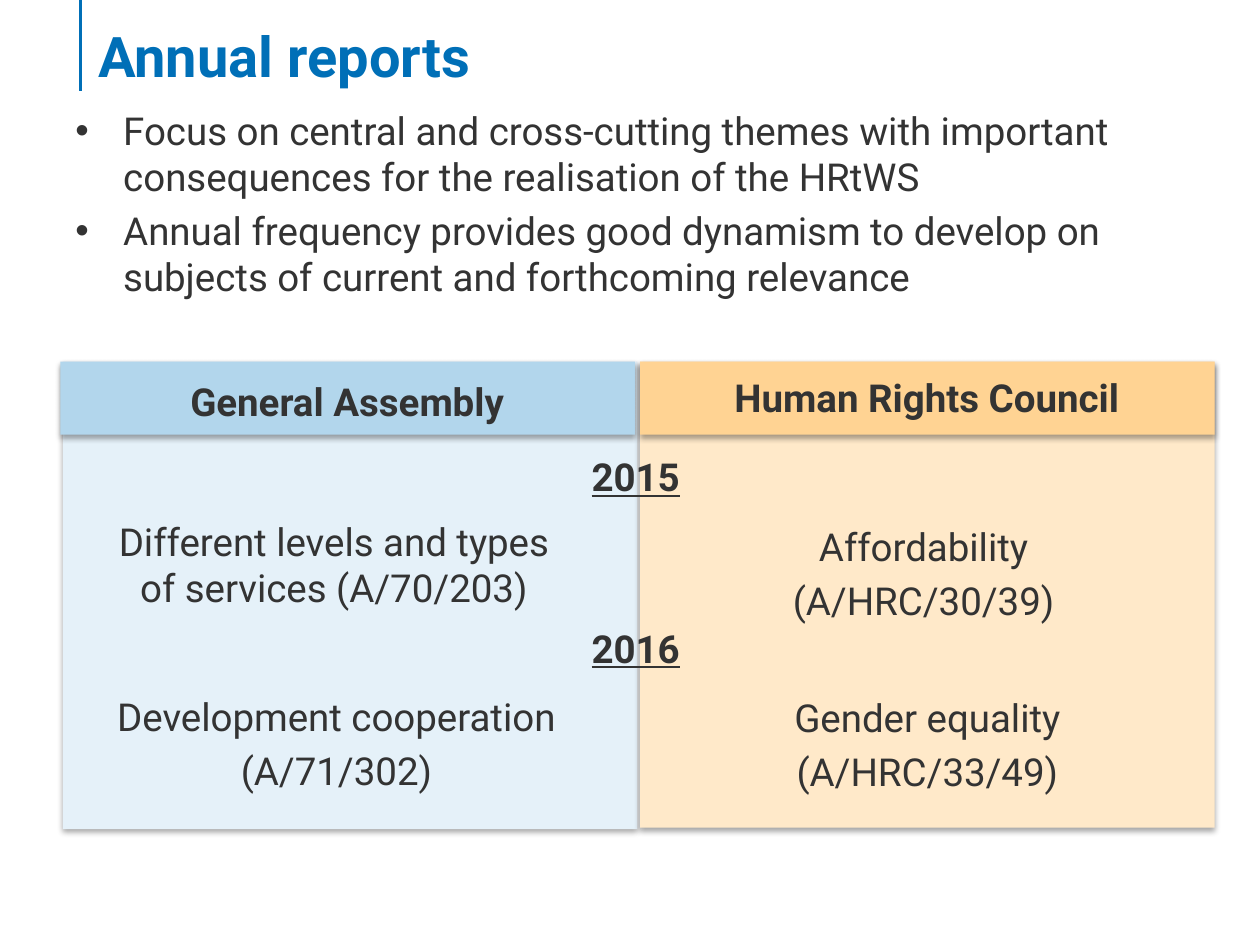
import pptx
import pptx.util
import pptx.dml.color
import pptx.enum.shapes
import pptx.enum.text
import pptx.oxml
import pptx.oxml.ns
from pptx.util import Inches

RGBColor = pptx.dml.color.RGBColor
BLUE = RGBColor(0x00, 0x6F, 0xB7)
INK = RGBColor(0x33, 0x33, 0x33)
PALE_BLUE = RGBColor(0xE5, 0xF1, 0xF9)
SKY = RGBColor(0xB2, 0xD6, 0xEC)
PALE_ORANGE = RGBColor(0xFF, 0xE9, 0xC9)
ORANGE = RGBColor(0xFF, 0xD3, 0x93)
FONT = "Roboto"
BODY_SIZE = 22
CENTER = pptx.enum.text.PP_ALIGN.CENTER
NAMESPACE = pptx.oxml.ns.nsdecls("a")
SHADOW = (
    f'<a:effectLst {NAMESPACE}><a:outerShdw blurRad="40000" dist="23000" dir="5400000" '
    'rotWithShape="0"><a:srgbClr val="000000"><a:alpha val="35000"/></a:srgbClr>'
    "</a:outerShdw></a:effectLst>"
)


def add_text(page, left, top, width, height, lines, size=BODY_SIZE, color=INK,
             bold=False, underline=False, align=CENTER, bullet=False):
    """Place a wrapped text box, one paragraph a line, and return its frame."""
    box = page.shapes.add_textbox(Inches(left), Inches(top), Inches(width), Inches(height))
    frame = box.text_frame
    frame.word_wrap = True
    frame.text = "\n".join(lines)
    for index, para in enumerate(frame.paragraphs):
        para.alignment = align
        if index:
            para.space_before = pptx.util.Pt(size * 0.2)
        if bullet:
            properties = para._p.get_or_add_pPr()
            properties.set("marL", str(Inches(0.38)))
            properties.set("indent", str(-Inches(0.38)))
            properties.append(pptx.oxml.parse_xml(f'<a:buFont {NAMESPACE} typeface="Arial"/>'))
            properties.append(pptx.oxml.parse_xml(f'<a:buChar {NAMESPACE} char="•"/>'))
        for span in para.runs:
            span.font.name = FONT
            span.font.size = pptx.util.Pt(size)
            span.font.color.rgb = color
            span.font.bold = bold
            span.font.underline = underline
    return frame


def add_panel(page, left, top, width, height, color):
    """Place a borderless rectangle with a soft shadow below it."""
    panel = page.shapes.add_shape(
        pptx.enum.shapes.MSO_SHAPE.RECTANGLE,
        Inches(left), Inches(top), Inches(width), Inches(height))
    panel.fill.solid()
    panel.fill.fore_color.rgb = color
    panel.line.fill.background()
    panel._element.spPr.append(pptx.oxml.parse_xml(SHADOW))


def add_title(page, left, top, width, height, title):
    """Place the title with the vertical rule that drops from the page edge."""
    rule = page.shapes.add_connector(
        pptx.enum.shapes.MSO_CONNECTOR.STRAIGHT,
        Inches(left - 0.04), Inches(0), Inches(left - 0.04), Inches(0.72))
    rule.line.color.rgb = BLUE
    rule.line.width = pptx.util.Pt(2)
    rule._element.spPr.append(pptx.oxml.parse_xml(f"<a:effectLst {NAMESPACE}/>"))
    frame = add_text(page, left, top, width, height, [title], size=32, color=BLUE,
                     bold=True, align=pptx.enum.text.PP_ALIGN.LEFT)
    frame.vertical_anchor = pptx.enum.text.MSO_ANCHOR.MIDDLE


def add_column(page, left, top, width, height, colors, heading, heading_top, reports,
               panel_shift=0):
    """Place one body's column: panel, heading band and its reports."""
    panel_color, band_color = colors
    add_panel(page, left + panel_shift, top, width, height, panel_color)
    add_panel(page, left, top, width, 0.58, band_color)
    add_text(page, left + 0.22, top + heading_top, 4.11, 0.5, [heading], bold=True)
    for shift, report_top, lines in reports:
        add_text(page, left + shift, top + report_top, 3.72, 0.84, lines)


def add_years(page, left, top, width, gap, years):
    """Place the underlined years at equal steps across both columns."""
    for index, year in enumerate(years):
        add_text(page, left, top + index * gap, width, 0.5, [year], bold=True, underline=True)


def main():
    """Build the annual reports slide and save it."""
    deck = pptx.Presentation()
    deck.slide_width, deck.slide_height = Inches(10), Inches(7.5)
    page = deck.slides.add_slide(deck.slide_layouts[6])
    add_title(page, 0.68, 0.11, 9, 0.65, "Annual reports")
    add_text(page, 0.5, 0.8, 8.96, 1.88, [
        "Focus on central and cross-cutting themes with important consequences "
        "for the realisation of the HRtWS",
        "Annual frequency provides good dynamism to develop on subjects of "
        "current and forthcoming relevance",
    ], align=pptx.enum.text.PP_ALIGN.LEFT, bullet=True)
    add_column(page, 0.48, 2.87, 4.56, 3.71, (PALE_BLUE, SKY), "General Assembly", 0.08, [
        (0.31, 1.19, ["Different levels and types of services (A/70/203)"]),
        (0.33, 2.58, ["Development cooperation", "(A/71/302)"]),
    ], panel_shift=0.02)
    add_column(page, 5.08, 2.87, 4.56, 3.7, (PALE_ORANGE, ORANGE), "Human Rights Council", 0.05, [
        (0.39, 1.23, ["Affordability", "(A/HRC/30/39)"]),
        (0.42, 2.59, ["Gender equality", "(A/HRC/33/49)"]),
    ])
    add_years(page, 0.87, 3.55, 8.35, 1.36, ["2015", "2016"])
    deck.save("out.pptx")


if __name__ == "__main__":
    main()
